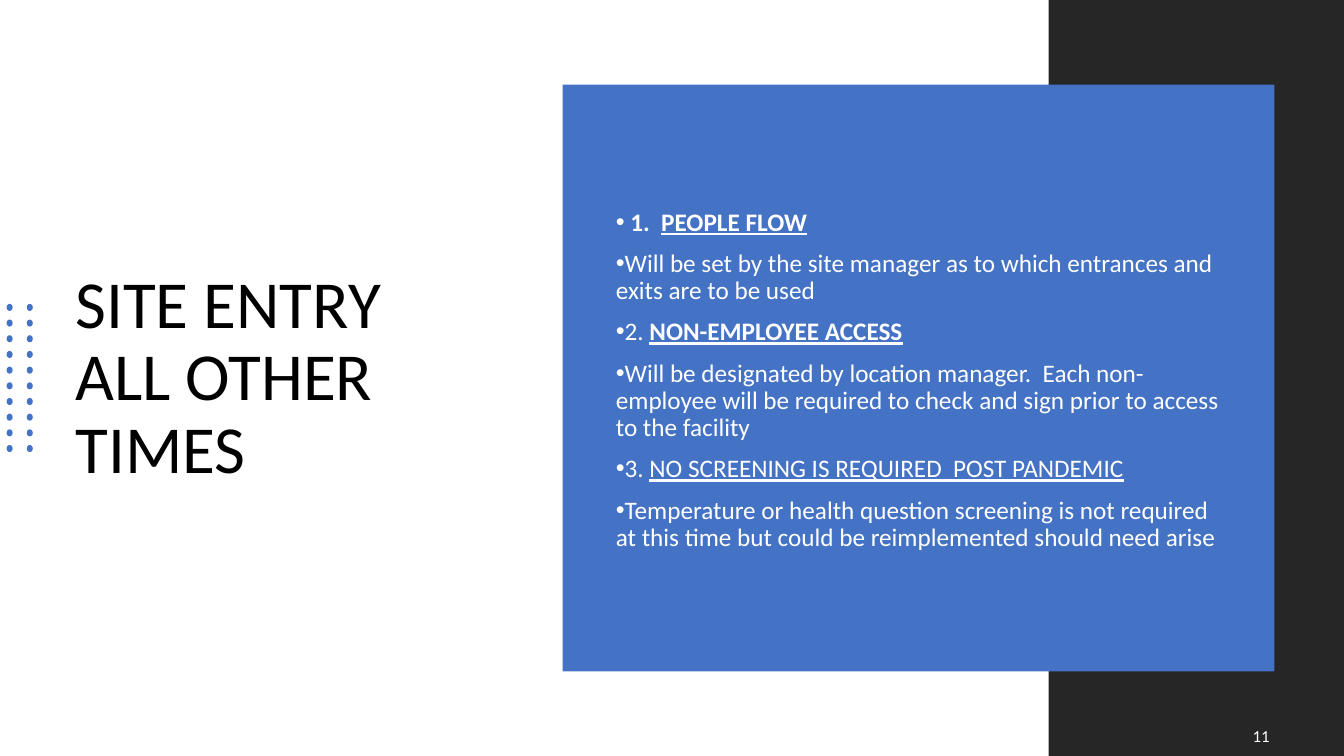
from lxml import etree
from pptx import Presentation
from pptx.dml.color import RGBColor
from pptx.enum.shapes import MSO_SHAPE
from pptx.enum.text import MSO_ANCHOR, PP_ALIGN
from pptx.oxml.ns import qn
from pptx.util import Inches, Pt

RECT, OVAL = MSO_SHAPE.RECTANGLE, MSO_SHAPE.OVAL
MIDDLE = MSO_ANCHOR.MIDDLE
LEFT, RIGHT = PP_ALIGN.LEFT, PP_ALIGN.RIGHT

THEME = {
    "font": "Calibri",
    "blue": "4472C4", "dark": "262626", "white": "FFFFFF", "black": "000000",
    "title": 48, "body": 18, "number": 12,
}

TITLE = "SITE ENTRY ALL OTHER TIMES"
PAGE_NUMBER = "11"
RULES = [
    [(" 1.  ", "b"), ("PEOPLE FLOW", "bu")],
    [("Will be set by the site manager as to which entrances and exits are to be used", "")],
    [("2. ", ""), ("NON-EMPLOYEE ACCESS", "bu")],
    [("Will be designated by location manager.  Each non-employee will be required "
      "to check and sign prior to access to the facility", "")],
    [("3. ", ""), ("NO SCREENING IS REQUIRED  POST PANDEMIC", "u")],
    [("Temperature or health question screening is not required at this time "
      "but could be reimplemented should need arise", "")],
]

SLIDE_W, SLIDE_H = 13.33, 7.5
SIDE_BAND = (10.4, 0, 2.93, SLIDE_H)
PANEL = (5.58, 0.84, 7.06, 5.82)
TITLE_BOX = (0.65, 1.14, 4.16, 5.24)
RULES_BOX = (6.01, 1.29, 6.19, 4.97)
NUMBER_BOX = (10.75, 7.1, 1.94, 0.4)
DOT_LEFT, DOT_TOP, DOT_W, DOT_H = 0.06, 3.02, 0.07, 0.06
DOT_COLS, DOT_ROWS, DOT_COL_STEP, DOT_ROW_STEP = 2, 10, 0.2, 1.4 / 9


def color(name):
    return RGBColor.from_string(THEME[name])


def add_block(shapes, kind, box, fill):
    sp = shapes.add_shape(kind, *map(Inches, box))
    sp.shadow.inherit = False
    sp.fill.solid()
    sp.fill.fore_color.rgb = color(fill)
    sp.line.fill.background()
    return sp


def add_bullet(p):
    pPr = p._p.get_or_add_pPr()
    pPr.set("marL", "0")
    pPr.set("indent", str(-Inches(0.25)))
    etree.SubElement(pPr, qn("a:buFont")).set("typeface", "Arial")
    etree.SubElement(pPr, qn("a:buChar")).set("char", "•")


def add_text(s, text, *, box, size, fill, align=LEFT, line=None, before=0, after=0, bullet=False):
    tf = s.shapes.add_textbox(*map(Inches, box)).text_frame
    tf.word_wrap = True
    tf.vertical_anchor = MIDDLE
    paragraphs = [[(text, "")]] if isinstance(text, str) else text
    for i, runs in enumerate(paragraphs):
        p = tf.add_paragraph() if i else tf.paragraphs[0]
        p.alignment = align
        p.line_spacing = line
        p.space_before, p.space_after = Pt(before), Pt(after)
        if bullet:
            add_bullet(p)
        for words, style in runs:
            r = p.add_run()
            r.text = words
            r.font.name = THEME["font"]
            r.font.size = Pt(THEME[size])
            r.font.color.rgb = color(fill)
            r.font.bold = "b" in style
            r.font.underline = "u" in style


def add_dots(s):
    group = s.shapes.add_group_shape()
    for row in range(DOT_ROWS):
        for col in range(DOT_COLS):
            box = (DOT_LEFT + col * DOT_COL_STEP, DOT_TOP + row * DOT_ROW_STEP, DOT_W, DOT_H)
            add_block(group.shapes, OVAL, box, "blue").rotation = 90


def main():
    prs = Presentation()
    prs.slide_width, prs.slide_height = Inches(SLIDE_W), Inches(SLIDE_H)
    s = prs.slides.add_slide(prs.slide_layouts[6])
    add_text(s, TITLE, box=TITLE_BOX, size="title", fill="black", line=0.9)
    add_dots(s)
    add_block(s.shapes, RECT, SIDE_BAND, "dark")
    add_block(s.shapes, RECT, PANEL, "blue")
    add_text(s, RULES, box=RULES_BOX, size="body", fill="white", line=0.9, before=10, bullet=True)
    add_text(s, PAGE_NUMBER, box=NUMBER_BOX, size="number", fill="white", align=RIGHT, after=6)
    prs.save("out.pptx")


if __name__ == "__main__":
    main()
